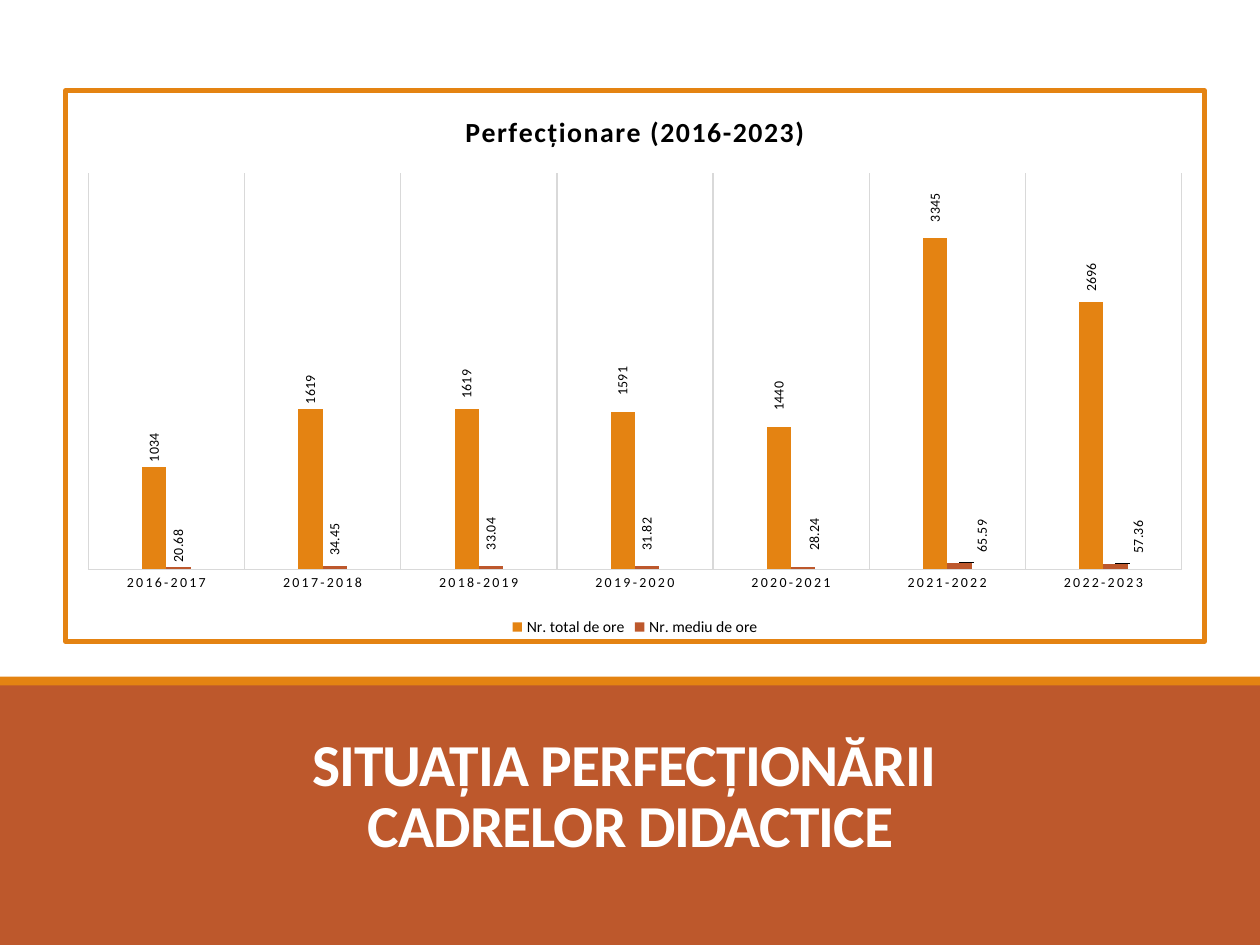
from lxml import etree
from pptx import Presentation
from pptx import util as u
from pptx.chart.data import CategoryChartData
from pptx.dml.color import RGBColor
from pptx.enum import chart as charts, shapes, text
from pptx.oxml import parse_xml
from pptx.oxml.ns import nsdecls, qn

COLORS = {"orange": "E48312", "rust": "BD582C", "white": "FFFFFF",
          "black": "000000", "grid": "D9D9D9"}
FONT = "Calibri"
TITLE = "SITUAȚIA PERFECȚIONĂRII \vCADRELOR DIDACTICE"
CHART_TITLE = "Perfecționare (2016-2023)"
YEARS = [f"{year}-{year + 1}" for year in range(2016, 2023)]

# Label shifts: point index -> (x, y) as fractions of the chart
SERIES = [
    {"name": "Nr. total de ore", "color": "orange",
     "values": [1034, 1619, 1619, 1591, 1440, 3345, 2696],
     "shifts": {2: (0, -0.01), 3: (0, -0.02), 4: (0, -0.02),
                5: (0, -0.02), 6: (0, -0.01)}},
    {"name": "Nr. mediu de ore", "color": "rust",
     "values": [20.68, 34.45, 33.04, 31.82, 28.24, 65.59, 57.36],
     "shifts": {1: (0, -0.01), 2: (0, -0.02), 3: (0, -0.02),
                4: (0.01, -0.02), 5: (0.02, -0.01), 6: (0.02, -0.01)}},
]
# Background and bands: top, height, colour
BANDS = [(0, 7.5, "white"), (5.42, 2.08, "rust"), (5.37, 0.07, "orange")]
PLOT = {"x": 0.02, "y": 0.15, "w": 0.96, "h": 0.72}


def rgb(name):
    return RGBColor.from_string(COLORS[name])


def style(font, size, color="black", bold=False):
    font.name, font.size, font.bold = FONT, u.Pt(size), bold
    font.color.rgb = rgb(color)


def stroke(line, color, width):
    line.color.rgb = rgb(color)
    line.width = u.Pt(width)


def add_layout(parent, index, values, inner=False):
    """Insert a manual layout into a chart element."""
    old = parent.find(qn("c:layout"))
    if old is not None:
        parent.remove(old)
    layout = etree.Element(qn("c:layout"))
    manual = etree.SubElement(layout, qn("c:manualLayout"))
    settings = {"layoutTarget": "inner", "xMode": "edge", "yMode": "edge"} if inner else {}
    for tag, value in {**settings, **values}.items():
        etree.SubElement(manual, qn(f"c:{tag}")).set("val", str(value))
    parent.insert(index, layout)


def add_labels(series, shifts):
    labels = series.data_labels
    labels.show_value = True
    labels.position = charts.XL_LABEL_POSITION.OUTSIDE_END
    style(labels.font, 8)
    element = series.data_labels._element
    body = element.find(qn("c:txPr")).find(qn("a:bodyPr"))
    body.set("rot", "-5400000")
    body.set("vert", "horz")
    for place, (point, (x, y)) in enumerate(shifts.items()):
        flags = "".join(f'<c:{tag} val="{int(tag == "showVal")}"/>' for tag in (
            "showLegendKey", "showVal", "showCatName", "showSerName",
            "showPercent", "showBubbleSize"))
        label = parse_xml(f'<c:dLbl {nsdecls("c")}><c:idx val="{point}"/>'
                          f'<c:dLblPos val="outEnd"/>{flags}</c:dLbl>')
        add_layout(label, 1, {"x": x, "y": y})
        element.insert(place, label)


deck = Presentation()
deck.slide_width, deck.slide_height = u.Inches(10), u.Inches(7.5)
page = deck.slides.add_slide(deck.slide_layouts[5])

# Bands
for top, height, color in BANDS:
    band = page.shapes.add_shape(shapes.MSO_SHAPE.RECTANGLE, 0, u.Inches(top),
                                 deck.slide_width, u.Inches(height))
    band.shadow.inherit = False
    band.fill.solid()
    band.fill.fore_color.rgb = rgb(color)
    band.line.fill.background()

# Title, brought in front of the bands
title = page.shapes.title
title.left, title.top, title.width, title.height = map(u.Inches, (0.88, 5.74, 8.25, 1.13))
title.element.getparent().append(title.element)
frame = title.text_frame
frame.text = TITLE
frame.word_wrap = True
frame.auto_size = text.MSO_AUTO_SIZE.NONE
frame.vertical_anchor = text.MSO_ANCHOR.BOTTOM
para = frame.paragraphs[0]
para.alignment = text.PP_ALIGN.CENTER
para.line_spacing = 0.85
for span in para.runs:
    style(span.font, 34, "white", True)
    span.font._element.set("spc", "-50")

# Chart
data = CategoryChartData()
data.categories = YEARS
for entry in SERIES:
    data.add_series(entry["name"], entry["values"])
chart = page.shapes.add_chart(
    charts.XL_CHART_TYPE.COLUMN_CLUSTERED, u.Inches(0.5), u.Inches(0.7),
    u.Inches(9.08), u.Inches(4.41), data).chart
style(chart.font, 10)

chart.has_title = True
heading = chart.chart_title.text_frame
heading.text = CHART_TITLE
heading_font = heading.paragraphs[0].runs[0].font
style(heading_font, 16, bold=True)
heading_font._element.set("spc", "100")

chart.has_legend = True
chart.legend.position = charts.XL_LEGEND_POSITION.BOTTOM
chart.legend.include_in_layout = False
style(chart.legend.font, 9)

# Axes
years = chart.category_axis
years.major_tick_mark = charts.XL_TICK_MARK.NONE
years.has_major_gridlines = True
stroke(years.major_gridlines.format.line, "grid", 0.75)
stroke(years.format.line, "grid", 0.75)
style(years.tick_labels.font, 8)
years.tick_labels.font._element.set("spc", "120")
hours = chart.value_axis
hours.minimum_scale, hours.maximum_scale = 0, 4000
hours.has_major_gridlines = False
hours.visible = False

# Columns
plot = chart.plots[0]
plot.gap_width, plot.overlap = 444, 0
plot.vary_by_categories = False
for series, entry in zip(plot.series, SERIES):
    series.format.fill.solid()
    series.format.fill.fore_color.rgb = rgb(entry["color"])
    add_labels(series, entry["shifts"])

# Plot position and chart frame
space = chart.element
add_layout(space.find(qn("c:chart")).find(qn("c:plotArea")), 0, PLOT, inner=True)
space.find(qn("c:chart")).addnext(parse_xml(
    f'<c:spPr {nsdecls("c", "a")}><a:solidFill><a:srgbClr val="{COLORS["white"]}"/></a:solidFill>'
    f'<a:ln w="{u.Pt(3)}"><a:solidFill><a:srgbClr val="{COLORS["orange"]}"/></a:solidFill>'
    '</a:ln></c:spPr>'))

deck.save("out.pptx")
